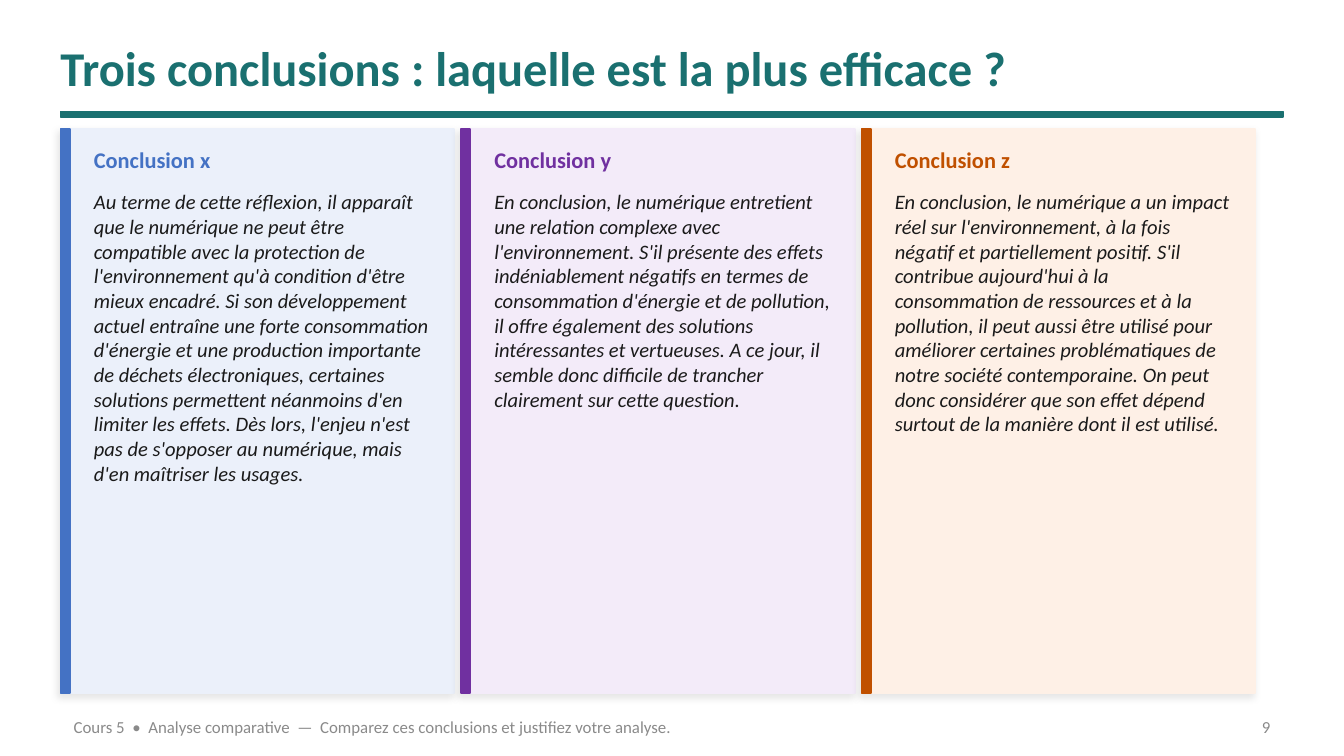
"""Build the slide that compares three conclusions side by side."""
from dataclasses import dataclass

from lxml import etree
from pptx import Presentation
from pptx.dml.color import RGBColor
from pptx.enum import shapes, text
from pptx.oxml import ns
from pptx.util import Pt


@dataclass(frozen=True)
class Theme:
    """Colours, font and type sizes."""
    font: str = "Calibri"
    accent: str = "1A7070"
    ink: str = "1A1A1A"
    muted: str = "8A8A8A"
    background: str = "FFFFFF"
    shadow: str = "000000"
    title_size: float = 26
    heading_size: float = 12
    body_size: float = 11
    footer_size: float = 9


@dataclass(frozen=True)
class Box:
    """A rectangle in points."""
    left: float
    top: float
    width: float
    height: float


@dataclass(frozen=True)
class Conclusion:
    """One column of the comparison."""
    heading: str
    body: str
    accent: str
    tint: str


THEME = Theme()
MARGIN = 32.4
CONTENT_WIDTH = 655.2
COLUMN_TOP, COLUMN_WIDTH, COLUMN_HEIGHT = 69.12, 210.96, 302.4
COLUMN_STEP = 214.56
STRIPE_WIDTH = 5.04
TEXT_INDENT, TEXT_WIDTH = 10.8, 195.12

CONCLUSIONS = [
    Conclusion(
        "Conclusion x",
        "Au terme de cette réflexion, il apparaît que le numérique ne peut être compatible avec la "
        "protection de l'environnement qu'à condition d'être mieux encadré. Si son développement "
        "actuel entraîne une forte consommation d'énergie et une production importante de déchets "
        "électroniques, certaines solutions permettent néanmoins d'en limiter les effets. Dès lors, "
        "l'enjeu n'est pas de s'opposer au numérique, mais d'en maîtriser les usages.",
        "4472C4", "EBF0FA"),
    Conclusion(
        "Conclusion y",
        "En conclusion, le numérique entretient une relation complexe avec l'environnement. S'il "
        "présente des effets indéniablement négatifs en termes de consommation d'énergie et de "
        "pollution, il offre également des solutions intéressantes et vertueuses. A ce jour, il "
        "semble donc difficile de trancher clairement sur cette question.",
        "7030A0", "F3EBF9"),
    Conclusion(
        "Conclusion z",
        "En conclusion, le numérique a un impact réel sur l'environnement, à la fois négatif et "
        "partiellement positif. S'il contribue aujourd'hui à la consommation de ressources et à la "
        "pollution, il peut aussi être utilisé pour améliorer certaines problématiques de notre "
        "société contemporaine. On peut donc considérer que son effet dépend surtout de la manière "
        "dont il est utilisé.",
        "C05000", "FEF0E6"),
]


def emu(box: Box) -> list:
    """Convert a box to slide lengths."""
    return [Pt(length) for length in (box.left, box.top, box.width, box.height)]


def write(frame, wording: str, size: float, color: str, *, bold: bool = False,
          italic: bool = False, align=text.PP_ALIGN.LEFT, anchor=text.MSO_ANCHOR.MIDDLE) -> None:
    """Fill a text frame with one formatted paragraph."""
    frame.text = wording
    frame.word_wrap = True
    frame.auto_size = text.MSO_AUTO_SIZE.NONE
    frame.vertical_anchor = anchor
    paragraph = frame.paragraphs[0]
    paragraph.alignment = align
    for run in paragraph.runs:
        run.font.name = THEME.font
        run.font.size = Pt(size)
        run.font.bold = bold
        run.font.italic = italic
        run.font.color.rgb = RGBColor.from_string(color)


def add_label(slide, box: Box, wording: str, size: float, color: str, **style) -> None:
    """Add a text box."""
    write(slide.shapes.add_textbox(*emu(box)).text_frame, wording, size, color, **style)


def add_block(slide, box: Box, color: str):
    """Add a rectangle of one colour without a shadow."""
    block = slide.shapes.add_shape(shapes.MSO_SHAPE.RECTANGLE, *emu(box))
    block.shadow.inherit = False
    block.fill.solid()
    block.fill.fore_color.rgb = RGBColor.from_string(color)
    block.line.color.rgb = RGBColor.from_string(color)
    block.line.width = Pt(1)
    return block


def cast_shadow(block) -> None:
    """Give a block a faint shadow towards the lower left."""
    effects = block.element.spPr.find(ns.qn("a:effectLst"))
    shadow = etree.SubElement(effects, ns.qn("a:outerShdw"), blurRad=str(Pt(4)), dist=str(Pt(2)),
                              dir=str(135 * 60000), algn="bl", rotWithShape="0")
    color = etree.SubElement(shadow, ns.qn("a:srgbClr"), val=THEME.shadow)
    etree.SubElement(color, ns.qn("a:alpha"), val="10000")


def add_title(slide, wording: str) -> None:
    """Place the title and the rule below it."""
    title = slide.shapes.title
    title.left, title.top, title.width, title.height = emu(Box(MARGIN, 14.4, CONTENT_WIDTH, 43.2))
    frame = title.text_frame
    frame.margin_left = frame.margin_right = frame.margin_top = frame.margin_bottom = 0
    write(frame, wording, THEME.title_size, THEME.accent, bold=True)
    add_block(slide, Box(MARGIN, 59.76, CONTENT_WIDTH, 2.88), THEME.accent)


def add_column(slide, conclusion: Conclusion, left: float) -> None:
    """Draw one conclusion as a tinted card with a stripe."""
    cast_shadow(add_block(slide, Box(left, COLUMN_TOP, COLUMN_WIDTH, COLUMN_HEIGHT), conclusion.tint))
    add_block(slide, Box(left, COLUMN_TOP, STRIPE_WIDTH, COLUMN_HEIGHT), conclusion.accent)
    text_left = left + TEXT_INDENT
    add_label(slide, Box(text_left, 75.6, TEXT_WIDTH, 20.16), conclusion.heading,
              THEME.heading_size, conclusion.accent, bold=True)
    add_label(slide, Box(text_left, 97.92, TEXT_WIDTH, 264.96), conclusion.body,
              THEME.body_size, THEME.ink, italic=True, anchor=text.MSO_ANCHOR.TOP)


def add_footer(slide, wording: str, number: str) -> None:
    """Add the footer line and the page number."""
    add_label(slide, Box(MARGIN, 382.32, 468, 14.4), wording, THEME.footer_size, THEME.muted)
    add_label(slide, Box(619.2, 382.32, 68.4, 14.4), number, THEME.footer_size, THEME.muted,
              align=text.PP_ALIGN.RIGHT)


def main() -> None:
    """Build and save the presentation."""
    deck = Presentation()
    deck.slide_width, deck.slide_height = Pt(720), Pt(405)
    slide = deck.slides.add_slide(deck.slide_layouts.get_by_name("Title Only"))
    slide.background.fill.solid()
    slide.background.fill.fore_color.rgb = RGBColor.from_string(THEME.background)
    add_title(slide, "Trois conclusions : laquelle est la plus efficace ?")
    add_footer(slide, "Cours 5  •  Analyse comparative  —  Comparez ces conclusions et justifiez "
                      "votre analyse.", "9")
    for index, conclusion in enumerate(CONCLUSIONS):
        add_column(slide, conclusion, MARGIN + index * COLUMN_STEP)
    deck.save("out.pptx")


if __name__ == "__main__":
    main()
